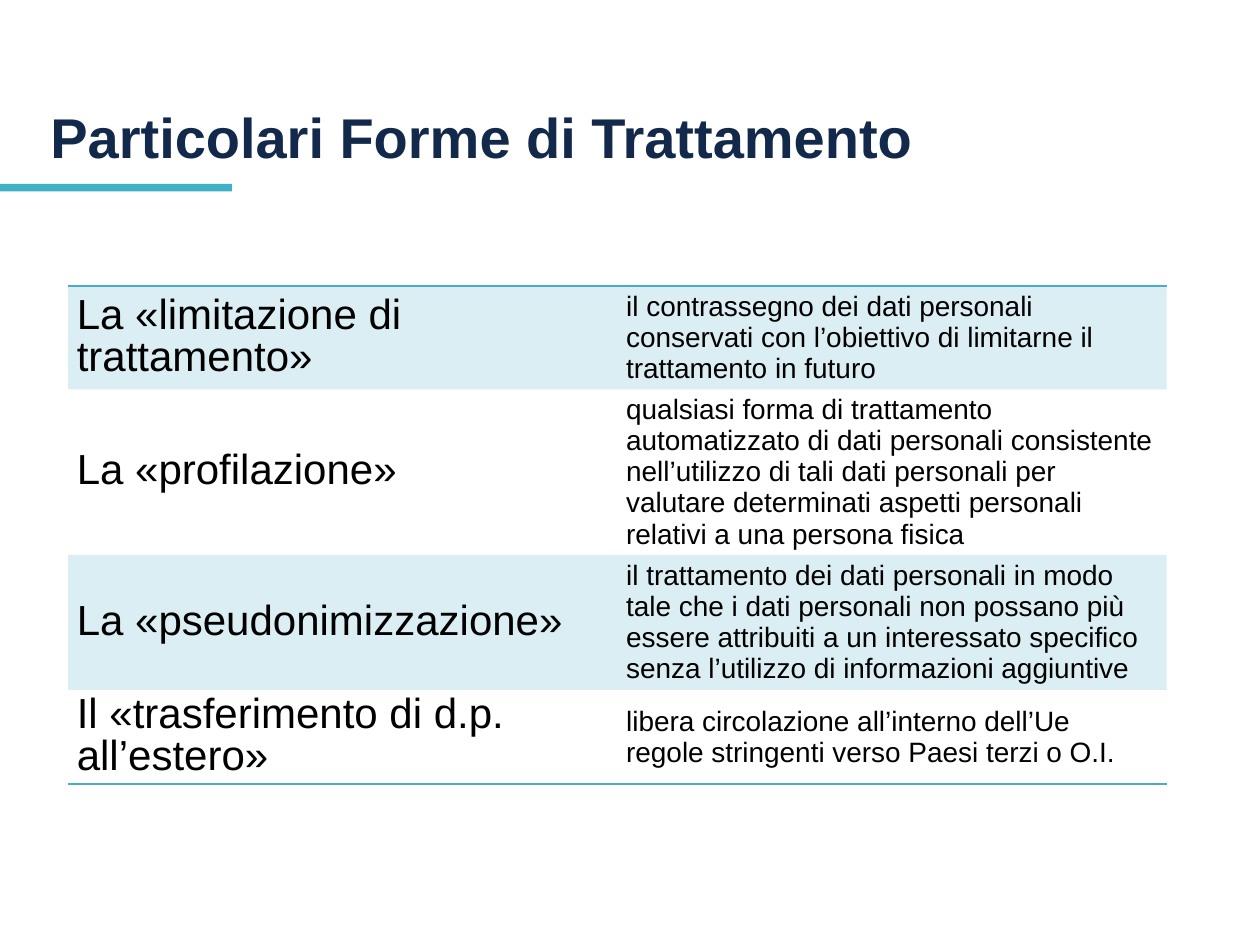
from pptx import Presentation
from pptx.dml.color import RGBColor
from pptx.enum.shapes import MSO_SHAPE
from pptx.enum.text import MSO_ANCHOR, MSO_AUTO_SIZE, PP_ALIGN
from pptx.oxml import parse_xml
from pptx.oxml.ns import nsdecls, qn
from pptx.util import Inches, Pt

FONT = "Arial"
COLORS = {"title": "13294B", "accent": "3EB1C8", "table": "4BACC6", "text": "000000"}
PLAIN_TABLE_STYLE = "{2D5ABB26-0587-4C30-8999-92F81FD0307C}"
ROW_HEIGHTS = [0.82, 1.07, 1.07, 0.57]
COLUMN_WIDTH = 4.36
TERMS = [
    ("La «limitazione di trattamento»",
     ["il contrassegno dei dati personali conservati con l’obiettivo di limitarne "
      "il trattamento in futuro"]),
    ("La «profilazione»",
     ["qualsiasi forma di trattamento automatizzato di dati personali consistente "
      "nell’utilizzo di tali dati personali per valutare determinati aspetti "
      "personali relativi a una persona fisica"]),
    ("La «pseudonimizzazione»",
     ["il trattamento dei dati personali in modo tale che i dati personali non "
      "possano più essere attribuiti a un interessato specifico senza l’utilizzo "
      "di informazioni aggiuntive"]),
    ("Il «trasferimento di d.p. all’estero»",
     ["libera circolazione all’interno dell’Ue",
      "regole stringenti verso Paesi terzi o O.I."]),
]


def add_run(para, text, size, color, bold=False):
    span = para.add_run()
    span.text = text
    span.font.name = FONT
    span.font.size = Pt(size)
    span.font.bold = bold
    span.font.color.rgb = RGBColor.from_string(COLORS[color])


def add_title(page, text):
    title = page.shapes.title
    title.left, title.top = Inches(0.3), Inches(0.32)
    title.width, title.height = Inches(8.12), Inches(1.08)
    frame = title.text_frame
    frame.word_wrap = True
    frame.auto_size = MSO_AUTO_SIZE.NONE
    frame.vertical_anchor = MSO_ANCHOR.BOTTOM
    para = frame.paragraphs[0]
    para.alignment = PP_ALIGN.LEFT
    add_run(para, text, 32, "title", bold=True)


def add_accent_bar(page):
    bar = page.shapes.add_shape(
        MSO_SHAPE.RECTANGLE, 0, Inches(1.46), Inches(1.84), Inches(0.06))
    bar.shadow.inherit = False
    bar.fill.solid()
    bar.fill.fore_color.rgb = RGBColor.from_string(COLORS["accent"])
    bar.line.fill.background()


def tint_cell(cell):
    """Fill the cell with the table colour at 20% opacity."""
    cell.fill.solid()
    cell.fill.fore_color.rgb = RGBColor.from_string(COLORS["table"])
    color = cell.fill._xPr.find(qn("a:solidFill"))[0]
    color.append(parse_xml(f'<a:alpha {nsdecls("a")} val="20000"/>'))


def add_border(cell, side):
    line = parse_xml(
        f'<a:{side} {nsdecls("a")} w="{Pt(1)}"><a:solidFill>'
        f'<a:srgbClr val="{COLORS["table"]}"/></a:solidFill></a:{side}>')
    cell._tc.get_or_add_tcPr().insert(0, line)


def write_cell(cell, lines, size, line_spacing=None):
    cell.vertical_anchor = MSO_ANCHOR.MIDDLE
    cell.margin_left = cell.margin_right = Inches(0.07)
    cell.margin_top = cell.margin_bottom = Inches(0.04)
    frame = cell.text_frame
    for index, text in enumerate(lines):
        para = frame.add_paragraph() if index else frame.paragraphs[0]
        para.line_spacing = line_spacing
        add_run(para, text, size, "text")


def add_terms_table(page):
    holder = page.shapes.add_table(
        len(TERMS), 2, Inches(0.54), Inches(2.27),
        Inches(2 * COLUMN_WIDTH), Inches(sum(ROW_HEIGHTS)))
    table = holder.table
    table.first_row = table.horz_banding = False
    table._tbl.tblPr.find(qn("a:tableStyleId")).text = PLAIN_TABLE_STYLE
    for column in table.columns:
        column.width = Inches(COLUMN_WIDTH)
    for index, (term, meaning) in enumerate(TERMS):
        row = table.rows[index]
        row.height = Inches(ROW_HEIGHTS[index])
        write_cell(row.cells[0], [term], 24, line_spacing=0.9)
        write_cell(row.cells[1], meaning, 16)
        for cell in row.cells:
            if index % 2 == 0:
                tint_cell(cell)
            else:
                cell.fill.background()
            if index == 0:
                add_border(cell, "lnT")
            if index == len(TERMS) - 1:
                add_border(cell, "lnB")


def main():
    deck = Presentation()
    deck.slide_width, deck.slide_height = Inches(10), Inches(7.5)
    page = deck.slides.add_slide(deck.slide_layouts[5])
    add_accent_bar(page)
    add_title(page, "Particolari Forme di Trattamento")
    add_terms_table(page)
    deck.save("out.pptx")


if __name__ == "__main__":
    main()
